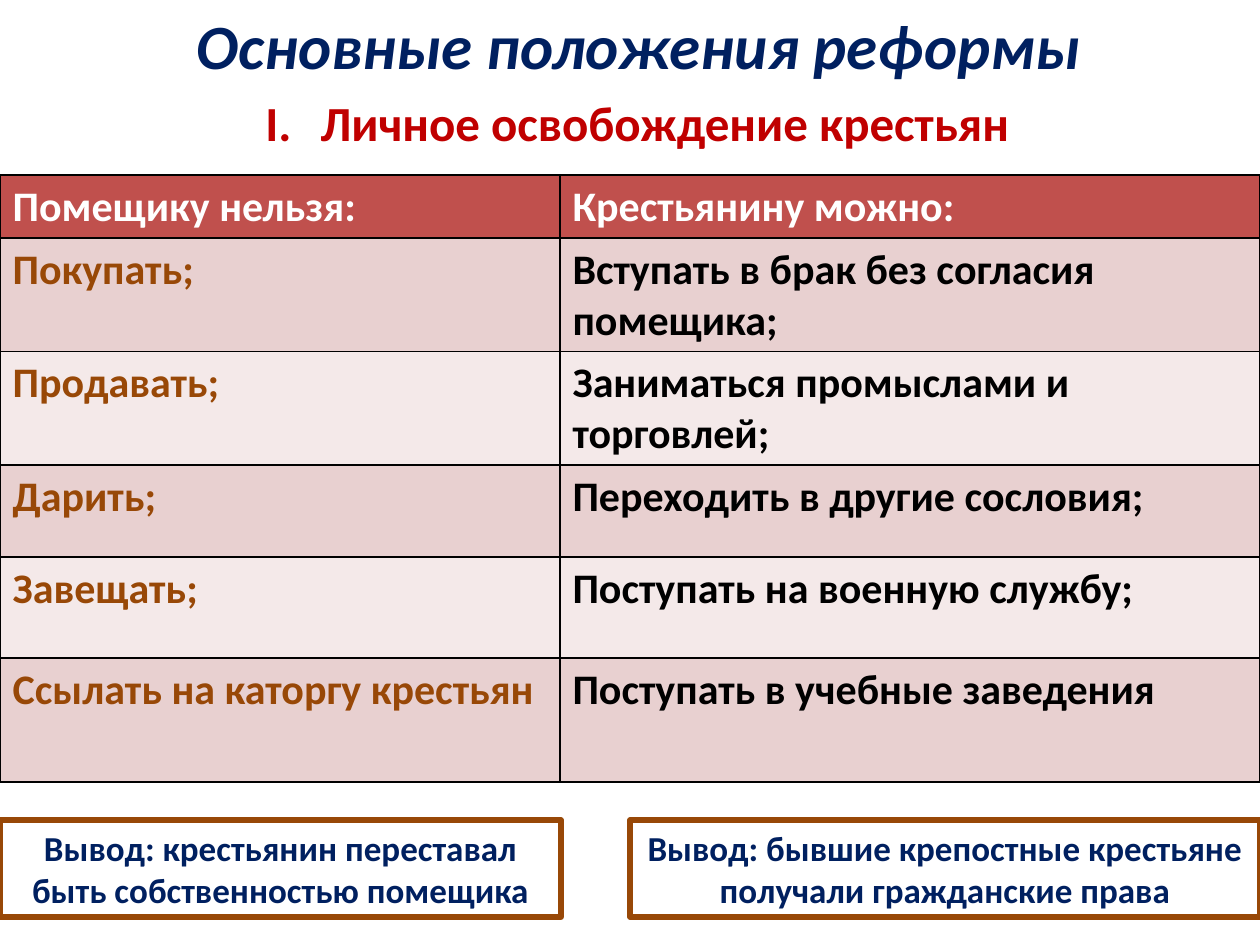
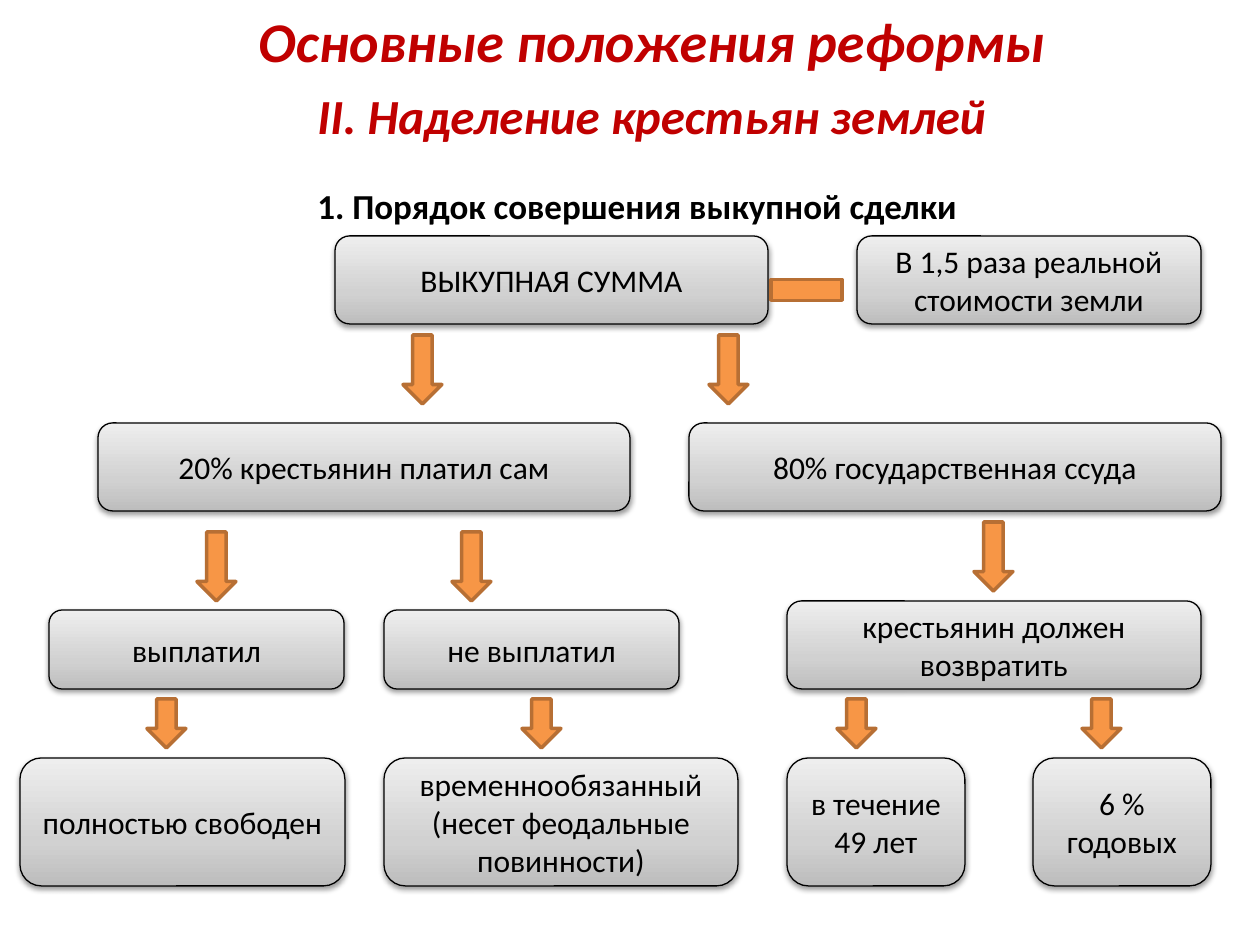
from pptx import Presentation
from pptx.dml.color import RGBColor
from pptx.enum.shapes import MSO_SHAPE
from pptx.enum.text import MSO_ANCHOR, MSO_AUTO_SIZE, PP_ALIGN
from pptx.oxml import parse_xml
from pptx.oxml.ns import nsdecls
from pptx.util import Pt

PX = 914400 / 126
WIDE, HIGH = 1260, 945
FONT = "Calibri"
NAVY = RGBColor(0x00, 0x20, 0x60)
RED = RGBColor(0xC0, 0x00, 0x00)
BROWN = RGBColor(0x98, 0x48, 0x07)
BLACK = RGBColor(0x00, 0x00, 0x00)
WHITE = RGBColor(0xFF, 0xFF, 0xFF)
HEAD = RGBColor(0xC0, 0x50, 0x4D)
BANDS = RGBColor(0xE8, 0xD0, 0xD0), RGBColor(0xF4, 0xE9, 0xE9)
ORANGE = RGBColor(0xF7, 0x96, 0x46)
RUST = RGBColor(0xB7, 0x6F, 0x34)
GREYS = (0, "BDBDBD"), (35, "D1D1D1"), (100, "EEEEEE")

TITLE = "Основные положения реформы"

RIGHTS = [
    ("Помещику нельзя:", "Крестьянину можно:"),
    ("Покупать;", "Вступать в брак без согласия помещика;"),
    ("Продавать;", "Заниматься промыслами и торговлей;"),
    ("Дарить;", "Переходить в другие сословия;"),
    ("Завещать;", "Поступать на военную службу;"),
    ("Ссылать на каторгу крестьян", "Поступать в учебные заведения"),
]
COLS = 560, 700
ROWS = 63, 113, 113, 92, 101, 124
TABLE_TOP = 175

# left, width, text
RESULTS = [
    (0, 561, "Вывод: крестьянин переставал быть собственностью помещика"),
    (630, 630, "Вывод: бывшие крепостные крестьяне\nполучали гражданские права"),
]

# top, height, then left, width, text of each box
LEVELS = [
    (236, 88, [(335, 433, "ВЫКУПНАЯ СУММА"),
               (857, 344, "В 1,5 раза реальной стоимости земли")]),
    (423, 88, [(98, 532, "20% крестьянин платил сам"),
               (689, 532, "80% государственная ссуда")]),
    (610, 79, [(49, 295, "выплатил"), (384, 295, "не выплатил")]),
    (601, 88, [(787, 414, "крестьянин должен возвратить")]),
    (758, 128, [(20, 325, "полностью свободен"),
                (384, 354, "временнообязанный (несет феодальные повинности)"),
                (787, 178, "в течение 49 лет"),
                (1033, 178, "6 % годовых")]),
]

# top, height, lefts of the arrows
ARROWS = [
    (335, 69, (403, 709)),
    (532, 69, (197, 452)),
    (522, 69, (974,)),
    (699, 49, (147, 522, 837, 1082)),
]
ARROW_WIDE = 39


def px(*nums):
    return [round(n * PX) for n in nums]


def write(frame, text, size=18, color=BLACK, bold=False, italic=False,
          align=PP_ALIGN.LEFT, anchor=MSO_ANCHOR.TOP, wrap=True, grow=False,
          roman=False):
    frame.word_wrap = wrap
    frame.vertical_anchor = anchor
    if grow:
        frame.auto_size = MSO_AUTO_SIZE.SHAPE_TO_FIT_TEXT
    for i, line in enumerate(text.split("\n")):
        para = frame.add_paragraph() if i else frame.paragraphs[0]
        if roman:
            props = para._p.get_or_add_pPr()
            props.set("marL", "400050")
            props.set("indent", "-400050")
            props.append(parse_xml(
                f'<a:buAutoNum {nsdecls("a")} type="romanUcPeriod"/>'))
        para.alignment = align
        run = para.add_run()
        run.text = line
        font = run.font
        font.name, font.size, font.color.rgb = FONT, Pt(size), color
        font.bold, font.italic = bold, italic


def label(slide, box, text, **style):
    shape = slide.shapes.add_textbox(*px(*box))
    write(shape.text_frame, text, bold=True, wrap=False, grow=True, **style)


def draw(slide, kind, box, line, weight, fill=None):
    shape = slide.shapes.add_shape(kind, *px(*box))
    shape.shadow.inherit = False
    if fill is None:
        shape.fill.background()
    else:
        shape.fill.solid()
        shape.fill.fore_color.rgb = fill
    shape.line.color.rgb = line
    shape.line.width = Pt(weight)
    return shape


def shade(shape):
    """Give a grey gradient, dark at the foot, and a soft shadow below."""
    stops = "".join(
        f'<a:gs pos="{at * 1000}"><a:srgbClr val="{tone}"/></a:gs>'
        for at, tone in GREYS)
    props = shape._element.spPr
    props.replace(props.find("{*}noFill"), parse_xml(
        f'<a:gradFill {nsdecls("a")} rotWithShape="1"><a:gsLst>{stops}</a:gsLst>'
        '<a:lin ang="16200000" scaled="1"/></a:gradFill>'))
    props.find("{*}effectLst").append(parse_xml(
        f'<a:outerShdw {nsdecls("a")} blurRad="40000" dist="20000" '
        'dir="5400000" rotWithShape="0"><a:srgbClr val="000000">'
        '<a:alpha val="38000"/></a:srgbClr></a:outerShdw>'))


def edge(cell):
    """Draw a black line on all four sides of a cell."""
    props = cell._tc.get_or_add_tcPr()
    for side in "LRTB":
        props.append(parse_xml(
            f'<a:ln{side} {nsdecls("a")} w="12700"><a:solidFill>'
            f'<a:srgbClr val="000000"/></a:solidFill></a:ln{side}>'))


def add_rights(slide):
    box = px(0, TABLE_TOP, sum(COLS), sum(ROWS))
    table = slide.shapes.add_table(len(ROWS), len(COLS), *box).table
    for col, wide in zip(table.columns, px(*COLS)):
        col.width = wide
    for row, high in zip(table.rows, px(*ROWS)):
        row.height = high
    for r, texts in enumerate(RIGHTS):
        for c, text in enumerate(texts):
            cell = table.cell(r, c)
            edge(cell)
            cell.fill.solid()
            cell.fill.fore_color.rgb = BANDS[(r - 1) % 2] if r else HEAD
            color = (BROWN, BLACK)[c] if r else WHITE
            write(cell.text_frame, text, size=24, color=color, bold=True)


def freedom(slide):
    label(slide, (184, 0, 919, 89), TITLE, size=36, color=NAVY, italic=True)
    label(slide, (253, 86, 776, 72), "Личное освобождение крестьян",
          size=28, color=RED, roman=True)
    add_rights(slide)
    for left, wide, text in RESULTS:
        box = draw(slide, MSO_SHAPE.RECTANGLE, (left, 820, wide, 97), BROWN, 3)
        write(box.text_frame, text, size=20, color=NAVY, bold=True,
              align=PP_ALIGN.CENTER, grow=True)


def land(slide):
    label(slide, (246, 0, 820, 81), TITLE, size=32, color=RED, italic=True)
    label(slide, (305, 79, 721, 72), "II. Наделение крестьян землей",
          size=28, color=RED, italic=True)
    label(slide, (305, 178, 670, 55), "1. Порядок совершения выкупной сделки",
          size=20)
    for top, high, boxes in LEVELS:
        for left, wide, text in boxes:
            box = draw(slide, MSO_SHAPE.ROUNDED_RECTANGLE,
                       (left, top, wide, high), BLACK, 0.75)
            shade(box)
            write(box.text_frame, text, align=PP_ALIGN.CENTER,
                  anchor=MSO_ANCHOR.MIDDLE)
    for top, high, lefts in ARROWS:
        for left in lefts:
            draw(slide, MSO_SHAPE.DOWN_ARROW, (left, top, ARROW_WIDE, high),
                 RUST, 2, ORANGE)
    draw(slide, MSO_SHAPE.MATH_MINUS, (758, 246, 97, 88), RUST, 2, ORANGE)


def main():
    deck = Presentation()
    deck.slide_width, deck.slide_height = px(WIDE, HIGH)
    for build in (freedom, land):
        build(deck.slides.add_slide(deck.slide_layouts[6]))
    deck.save("out.pptx")


if __name__ == "__main__":
    main()
